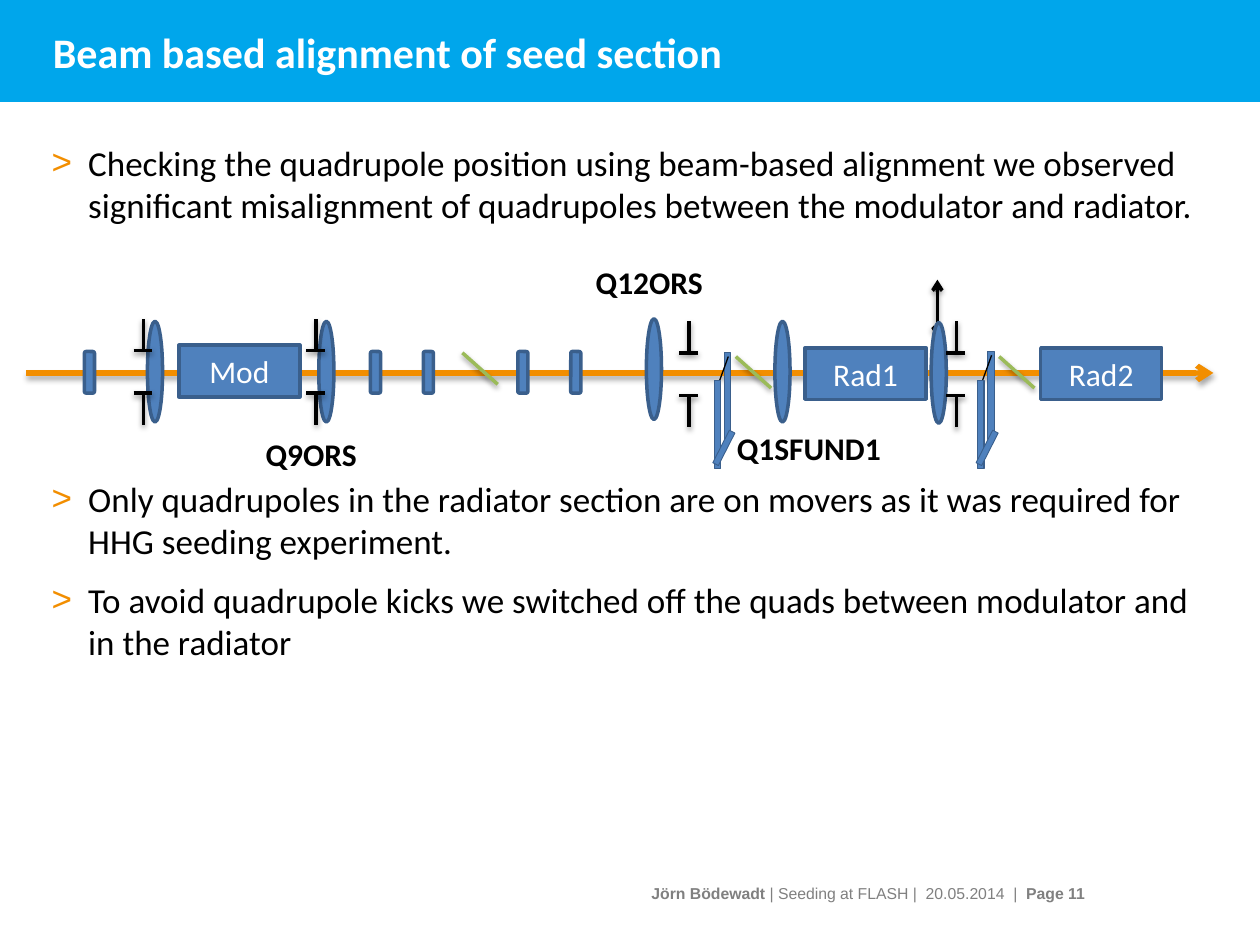
from dataclasses import dataclass
from typing import Optional

from lxml.etree import SubElement
from pptx import Presentation
from pptx.dml.color import RGBColor
from pptx.enum.shapes import MSO_CONNECTOR, MSO_SHAPE
from pptx.enum.text import MSO_ANCHOR, MSO_AUTO_SIZE, PP_ALIGN
from pptx.oxml.ns import qn
from pptx.util import Inches, Pt


@dataclass(frozen=True)
class Theme:
    band: str = "00A6EB"
    beam: str = "F28E00"
    device: str = "4F81BD"
    outline: str = "3A5F8C"
    screen: str = "9BBB59"
    black: str = "000000"
    white: str = "FFFFFF"
    footer: str = "808080"
    font: str = "Calibri"
    footer_font: str = "Arial"
    title_size: float = 24
    body_size: float = 20
    label_size: float = 18
    footer_size: float = 9


@dataclass(frozen=True)
class Box:
    left: float
    top: float
    width: float
    height: float

    def lengths(self):
        return [Inches(v) for v in (self.left, self.top, self.width, self.height)]


@dataclass(frozen=True)
class Label:
    text: str
    box: Box


@dataclass(frozen=True)
class Spot:
    """Left and top of a repeated beamline element."""
    x: float
    y: float


@dataclass(frozen=True)
class Bullet:
    text: str
    space_before: float


THEME = Theme()
BEAM_Y = 2.96

BULLETS = [
    Bullet("Checking the quadrupole position using beam-based alignment we observed "
           "significant misalignment of quadrupoles between the modulator and radiator.", 0),
    Bullet("Only quadrupoles in the radiator section are on movers as it was required "
           "for HHG seeding experiment.", 144),
    Bullet("To avoid quadrupole kicks we switched off the quads between modulator "
           "and in the radiator", 10),
]
QUADRUPOLES = [Spot(1.17, 2.55), Spot(2.53, 2.55), Spot(5.13, 2.53),
               Spot(6.15, 2.55), Spot(7.39, 2.56)]
UNDULATORS = [Label(text, Box(x, y, 0.96, 0.41)) for text, x, y in
              (("Mod", 1.42, 2.74), ("Rad1", 6.39, 2.76), ("Rad2", 8.26, 2.76))]
SCREENS = [Spot(3.67, 2.8), Spot(5.84, 2.83), Spot(7.93, 2.83)]
APERTURES = [Spot(1.06, 2.53), Spot(2.43, 2.53), Spot(5.39, 2.55), Spot(7.51, 2.55)]
MIRROR_UNITS = [Spot(5.6, 2.8), Spot(7.69, 2.79)]
CORRECTORS_X = [0.67, 2.94, 3.36, 4.11, 4.53]
QUADRUPOLE_LABELS = [Label("Q9ORS", Box(2.01, 3.4, 0.93, 0.4)),
                     Label("Q1SFUND1", Box(5.75, 3.36, 1.36, 0.4)),
                     Label("Q12ORS", Box(4.63, 2.04, 1.06, 0.4))]


def format_run(run, size: float, color: str, bold: bool = False, font: str = THEME.font) -> None:
    run.font.name = font
    run.font.size = Pt(size)
    run.font.bold = bold
    run.font.color.rgb = RGBColor.from_string(color)


def draw_shape(slide, kind, box: Box, line_width: float = 2, rotation: float = 0,
               fill: str = THEME.device):
    """Draw a filled preset shape; a line width of 0 means no outline."""
    shape = slide.shapes.add_shape(kind, *box.lengths())
    shape.shadow.inherit = False
    shape.rotation = rotation
    shape.fill.solid()
    shape.fill.fore_color.rgb = RGBColor.from_string(fill)
    if line_width:
        shape.line.color.rgb = RGBColor.from_string(THEME.outline)
        shape.line.width = Pt(line_width)
    else:
        shape.line.fill.background()
    return shape


def draw_line(slide, start: Spot, end: Spot, color: str = THEME.black, width: float = 2,
              arrows: tuple = (), shadow_opacity: Optional[int] = 38) -> None:
    """Draw a straight line; arrows holds headEnd and/or tailEnd."""
    line = slide.shapes.add_connector(MSO_CONNECTOR.STRAIGHT, Inches(start.x), Inches(start.y),
                                      Inches(end.x), Inches(end.y))
    line.line.color.rgb = RGBColor.from_string(color)
    line.line.width = Pt(width)
    properties = line.element.spPr
    for arrow in arrows:
        SubElement(properties.find(qn("a:ln")), qn(f"a:{arrow}"), type="arrow")
    effects = SubElement(properties, qn("a:effectLst"))
    if shadow_opacity:
        shadow = SubElement(effects, qn("a:outerShdw"), blurRad=str(Pt(3.1)), dist=str(Pt(1.6)),
                            dir="5400000", rotWithShape="0")
        shadow_color = SubElement(shadow, qn("a:srgbClr"), val=THEME.black)
        SubElement(shadow_color, qn("a:alpha"), val=str(shadow_opacity * 1000))


def draw_aperture(slide, spot: Spot) -> None:
    """Draw two facing T-shaped jaws, one above and one below the beam."""
    center = spot.x + 0.08
    for outer, inner in ((0, 0.25), (0.84, 0.59)):
        draw_line(slide, Spot(spot.x, spot.y + inner), Spot(spot.x + 0.15, spot.y + inner))
        draw_line(slide, Spot(center, spot.y + inner), Spot(center, spot.y + outer))


def draw_mirror_unit(slide, spot: Spot) -> None:
    x, y = spot.x, spot.y
    draw_shape(slide, MSO_SHAPE.RECTANGLE, Box(x + 0.15, y, 0.05, 0.7), 0.5)
    draw_line(slide, Spot(x + 0.09, y + 0.28), Spot(x + 0.18, y + 0.03), width=0.75,
              shadow_opacity=None)
    draw_shape(slide, MSO_SHAPE.RECTANGLE, Box(x + 0.07, 3.02, 0.05, 0.7), 0.75)
    draw_shape(slide, MSO_SHAPE.RECTANGLE, Box(x, 3.53, 0.29, 0.05), 0.5, rotation=297)


def draw_undulator(slide, label: Label) -> None:
    shape = draw_shape(slide, MSO_SHAPE.RECTANGLE, label.box)
    shape.text_frame.text = label.text
    shape.text_frame.vertical_anchor = MSO_ANCHOR.MIDDLE
    paragraph = shape.text_frame.paragraphs[0]
    paragraph.alignment = PP_ALIGN.CENTER
    format_run(paragraph.runs[0], THEME.label_size, THEME.white)


def draw_quadrupole_label(slide, label: Label) -> None:
    frame = slide.shapes.add_textbox(*label.box.lengths()).text_frame
    frame.word_wrap = False
    frame.auto_size = MSO_AUTO_SIZE.SHAPE_TO_FIT_TEXT
    frame.text = label.text
    format_run(frame.paragraphs[0].runs[0], THEME.label_size, THEME.black, bold=True)


def place(shape, box: Box) -> None:
    shape.left, shape.top, shape.width, shape.height = box.lengths()


def fill_title(slide) -> None:
    title = slide.shapes.title
    place(title, Box(0.32, 0.11, 9.32, 0.6))
    band = draw_shape(slide, MSO_SHAPE.RECTANGLE, Box(0, 0, 10, 0.81), 0, fill=THEME.band)
    title.element.addprevious(band.element)
    frame = title.text_frame
    frame.text = "Beam based alignment of seed section"
    frame.auto_size = MSO_AUTO_SIZE.NONE
    frame.vertical_anchor = MSO_ANCHOR.MIDDLE
    frame.paragraphs[0].alignment = PP_ALIGN.LEFT
    format_run(frame.paragraphs[0].runs[0], THEME.title_size, THEME.white, bold=True)


def fill_body(slide) -> None:
    body = slide.placeholders[1]
    place(body, Box(0.31, 1.07, 9.32, 5.24))
    frame = body.text_frame
    frame.text = "\n".join(bullet.text for bullet in BULLETS)
    frame.auto_size = MSO_AUTO_SIZE.NONE
    for paragraph, bullet in zip(frame.paragraphs, BULLETS):
        paragraph.space_before = Pt(bullet.space_before)
        paragraph.space_after = Pt(0)
        properties = paragraph._p.get_or_add_pPr()
        properties.set("marL", str(Inches(0.29)))
        properties.set("indent", str(Inches(-0.29)))
        bullet_color = SubElement(properties, qn("a:buClr"))
        SubElement(bullet_color, qn("a:srgbClr"), val=THEME.beam)
        SubElement(properties, qn("a:buFont"), typeface=THEME.footer_font)
        SubElement(properties, qn("a:buChar"), char=">")
        format_run(paragraph.runs[0], THEME.body_size, THEME.black)


def draw_footer(slide) -> None:
    frame = slide.shapes.add_textbox(*Box(0.31, 6.87, 8.3, 0.44).lengths()).text_frame
    frame.word_wrap = True
    frame.margin_right = 0
    frame.vertical_anchor = MSO_ANCHOR.MIDDLE
    paragraph = frame.paragraphs[0]
    paragraph.alignment = PP_ALIGN.RIGHT
    for text, bold in (("Jörn Bödewadt ", True),
                       ("| Seeding at FLASH |  20.05.2014  |  ", False), ("Page 11", True)):
        run = paragraph.add_run()
        run.text = text
        format_run(run, THEME.footer_size, THEME.footer, bold, THEME.footer_font)


def draw_beamline(slide) -> None:
    draw_line(slide, Spot(0.21, BEAM_Y), Spot(9.63, BEAM_Y), THEME.beam, 3, ("tailEnd",), 35)
    draw_line(slide, Spot(7.44, 2.22), Spot(7.44, 2.68), arrows=("headEnd", "tailEnd"))
    for spot in QUADRUPOLES:
        draw_shape(slide, MSO_SHAPE.OVAL, Box(spot.x, spot.y, 0.12, 0.8))
    for label in UNDULATORS:
        draw_undulator(slide, label)
    for spot in SCREENS:
        draw_line(slide, spot, Spot(spot.x + 0.28, spot.y + 0.25), THEME.screen)
    for spot in APERTURES:
        draw_aperture(slide, spot)
    for spot in MIRROR_UNITS:
        draw_mirror_unit(slide, spot)
    for x in CORRECTORS_X:
        draw_shape(slide, MSO_SHAPE.ROUNDED_RECTANGLE, Box(x, 2.79, 0.08, 0.33))
    for label in QUADRUPOLE_LABELS:
        draw_quadrupole_label(slide, label)


def main() -> None:
    presentation = Presentation()
    presentation.slide_width, presentation.slide_height = Inches(10), Inches(7.5)
    slide = presentation.slides.add_slide(presentation.slide_layouts[1])
    fill_title(slide)
    fill_body(slide)
    draw_footer(slide)
    draw_beamline(slide)
    presentation.save("out.pptx")


if __name__ == "__main__":
    main()
